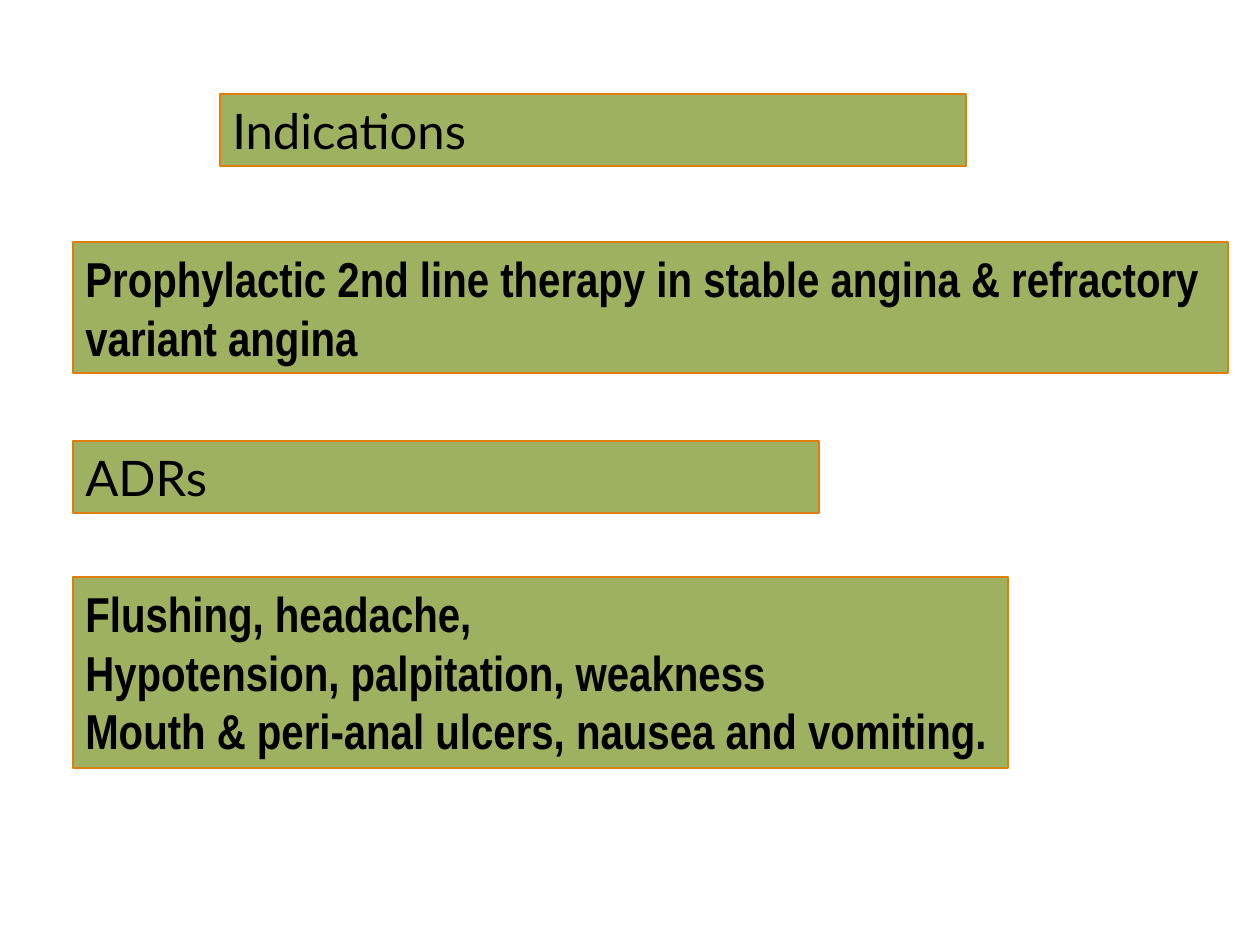
"""Build a slide of drug indications and adverse reactions."""
from dataclasses import dataclass

from pptx import Presentation
from pptx.dml.color import RGBColor as Rgb
from pptx.enum.shapes import MSO_SHAPE as Kind
from pptx.enum.text import MSO_ANCHOR as Anchor
from pptx.enum.text import MSO_AUTO_SIZE as Fit
from pptx.enum.text import PP_ALIGN as Align
from pptx.slide import Slide
from pptx.util import Emu, Pt


@dataclass(frozen=True)
class Theme:
    fill: Rgb = Rgb(0x9E, 0xB1, 0x60)
    edge: Rgb = Rgb(0xDD, 0x7E, 0x0E)
    ink: Rgb = Rgb(0, 0, 0)
    head: str = "Lato"
    body: str = "Arial Narrow"
    size: Pt = Pt(28)
    rule: Pt = Pt(0.75)


@dataclass(frozen=True)
class Panel:
    left: int
    top: int
    width: int
    height: int
    lines: tuple[str, ...]
    head: bool = False


THEME = Theme()
DPI = 126
EDGE = 73
HEAD_W, HEAD_H = 746, 72
PANELS = (
    Panel(220, 94, HEAD_W, HEAD_H, ("Indications",), True),
    Panel(EDGE, 242, 1155, 131, (
        "Prophylactic 2nd line therapy in stable angina & refractory variant angina",
    )),
    Panel(EDGE, 441, HEAD_W, HEAD_H, ("ADRs",), True),
    Panel(EDGE, 577, 935, 191, (
        "Flushing, headache,",
        "Hypotension, palpitation, weakness",
        "Mouth & peri-anal ulcers, nausea and vomiting.",
    )),
)


def px(count: int) -> Emu:
    return Emu(count * 914400 // DPI)


def draw(slide: Slide, panel: Panel) -> None:
    box = slide.shapes.add_shape(
        Kind.RECTANGLE, px(panel.left), px(panel.top), px(panel.width), px(panel.height)
    )
    box.shadow.inherit = False
    box.fill.solid()
    box.fill.fore_color.rgb = THEME.fill
    box.line.color.rgb = THEME.edge
    box.line.width = THEME.rule
    frame = box.text_frame
    frame.word_wrap = True
    frame.auto_size = Fit.SHAPE_TO_FIT_TEXT
    frame.vertical_anchor = Anchor.TOP
    frame.text = "\n".join(panel.lines)
    for para in frame.paragraphs:
        para.alignment = Align.LEFT
        para.font.name = THEME.head if panel.head else THEME.body
        para.font.size = THEME.size
        para.font.bold = not panel.head
        para.font.color.rgb = THEME.ink


def main() -> None:
    deck = Presentation()
    deck.slide_width, deck.slide_height = px(1260), px(945)
    slide = deck.slides.add_slide(deck.slide_layouts[6])
    for panel in PANELS:
        draw(slide, panel)
    deck.save("out.pptx")


if __name__ == "__main__":
    main()
